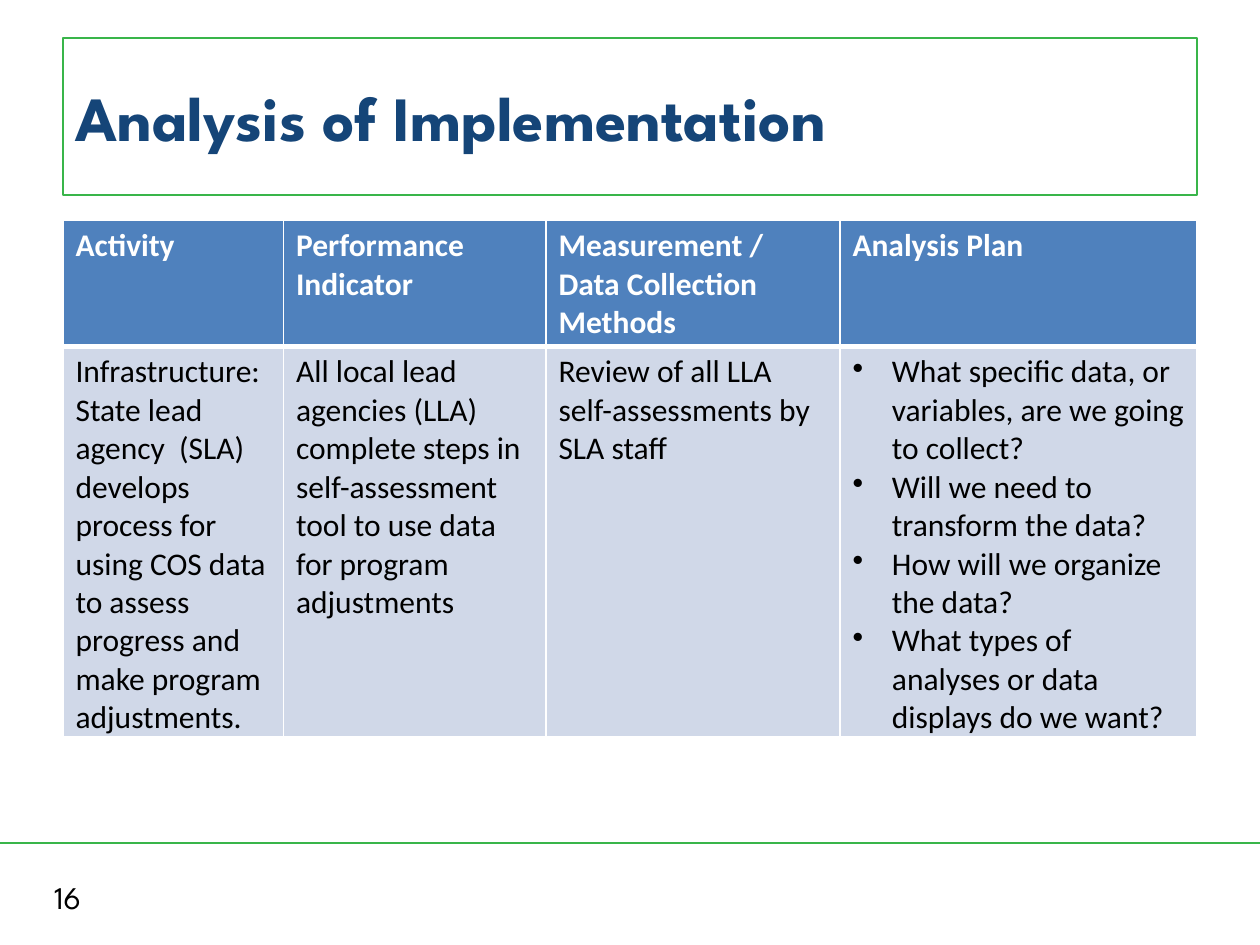
import pptx
import pptx.dml.color
import pptx.enum.shapes
import pptx.enum.text
import pptx.oxml
import pptx.oxml.ns
import pptx.util

Pt = pptx.util.Pt
RGBColor = pptx.dml.color.RGBColor

GREEN = RGBColor(0x39, 0xB5, 0x4A)
NAVY = RGBColor(0x15, 0x45, 0x78)
BLUE = RGBColor(0x4F, 0x81, 0xBD)
PALE_BLUE = RGBColor(0xD0, 0xD8, 0xE8)
WHITE = RGBColor(0xFF, 0xFF, 0xFF)
BLACK = RGBColor(0x00, 0x00, 0x00)

TITLE_FORMAT = {"name": "League Spartan", "size": Pt(36), "bold": True}
NUMBER_FORMAT = {"name": "League Spartan", "size": Pt(18)}
HEADER_FORMAT = {"name": "Calibri", "size": Pt(18), "bold": True}
BODY_FORMAT = {"name": "Calibri", "size": Pt(18), "bold": False}

COLUMN_WIDTHS = [126, 150, 168, 204]
ROW_HEIGHTS = [72, 223.2]
HEADERS = [
    "Activity",
    "Performance Indicator",
    "Measurement / Data Collection Methods",
    "Analysis Plan",
]
BODY = [
    "Infrastructure: State lead agency  (SLA) develops process for using COS "
    "data to assess progress and make program adjustments.",
    "All local lead agencies (LLA) complete steps in self-assessment tool "
    "to use data for program adjustments",
    "Review of all LLA self-assessments by SLA staff",
    [
        "What specific data, or variables, are we going to collect?",
        "Will we need to transform the data?",
        "How will we organize the data?",
        "What types of analyses or data displays do we want?",
    ],
]


def add_text(para, text, formats, color):
    span = para.add_run()
    span.text = text
    for name, value in formats.items():
        setattr(span.font, name, value)
    span.font.color.rgb = color


def add_bullet(para):
    properties = para._p.get_or_add_pPr()
    properties.set("marL", str(Pt(22.5)))
    properties.set("indent", str(-Pt(22.5)))
    properties.append(pptx.oxml.parse_xml(
        f'<a:buChar {pptx.oxml.ns.nsdecls("a")} char="•"/>'))


def add_title(page, text):
    box = page.shapes.add_shape(
        pptx.enum.shapes.MSO_SHAPE.RECTANGLE, Pt(36), Pt(21.6), Pt(648), Pt(90))
    box.shadow.inherit = False
    box.fill.background()
    box.line.color.rgb = GREEN
    box.line.width = Pt(1)
    frame = box.text_frame
    frame.word_wrap = True
    frame.vertical_anchor = pptx.enum.text.MSO_ANCHOR.MIDDLE
    para = frame.paragraphs[0]
    para.alignment = pptx.enum.text.PP_ALIGN.LEFT
    add_text(para, text, TITLE_FORMAT, NAVY)


def set_borders(cell, bottom_width):
    properties = cell._tc.get_or_add_tcPr()
    widths = {"lnL": 1, "lnR": 1, "lnT": 1, "lnB": bottom_width}
    for position, (side, width) in enumerate(widths.items()):
        properties.insert(position, pptx.oxml.parse_xml(
            f'<a:{side} {pptx.oxml.ns.nsdecls("a")} w="{Pt(width)}">'
            f'<a:solidFill><a:srgbClr val="{WHITE}"/></a:solidFill></a:{side}>'))


def fill_cell(cell, content, formats, color, fill, bottom_width):
    cell.fill.solid()
    cell.fill.fore_color.rgb = fill
    set_borders(cell, bottom_width)
    bulleted = isinstance(content, list)
    frame = cell.text_frame
    for index, text in enumerate(content if bulleted else [content]):
        para = frame.add_paragraph() if index else frame.paragraphs[0]
        if bulleted:
            add_bullet(para)
        add_text(para, text, formats, color)


def add_plan_table(page):
    table = page.shapes.add_table(
        len(ROW_HEIGHTS), len(COLUMN_WIDTHS), Pt(36), Pt(126),
        Pt(sum(COLUMN_WIDTHS)), Pt(sum(ROW_HEIGHTS))).table
    for column, width in zip(table.columns, COLUMN_WIDTHS):
        column.width = Pt(width)
    for row, height in zip(table.rows, ROW_HEIGHTS):
        row.height = Pt(height)
    for index, (header, body) in enumerate(zip(HEADERS, BODY)):
        fill_cell(table.cell(0, index), header, HEADER_FORMAT, WHITE, BLUE, 3)
        fill_cell(table.cell(1, index), body, BODY_FORMAT, BLACK, PALE_BLUE, 1)


def add_footer_rule(page):
    rule = page.shapes.add_connector(
        pptx.enum.shapes.MSO_CONNECTOR.STRAIGHT,
        Pt(0), Pt(481.7), Pt(720), Pt(481.7))
    rule.line.color.rgb = GREEN
    rule.line.width = Pt(1.5)
    rule._element.spPr.append(pptx.oxml.parse_xml(
        f'<a:effectLst {pptx.oxml.ns.nsdecls("a")}/>'))


def add_page_number(page, number):
    box = page.shapes.add_textbox(Pt(23.8), Pt(498.2), Pt(168), Pt(28.8))
    box.text_frame.word_wrap = True
    add_text(box.text_frame.paragraphs[0], number, NUMBER_FORMAT, BLACK)


def main():
    deck = pptx.Presentation()
    deck.slide_width = Pt(720)
    deck.slide_height = Pt(540)
    page = deck.slides.add_slide(deck.slide_layouts[6])
    add_footer_rule(page)
    add_page_number(page, "16")
    add_title(page, "Analysis of Implementation")
    add_plan_table(page)
    deck.save("out.pptx")


if __name__ == "__main__":
    main()
